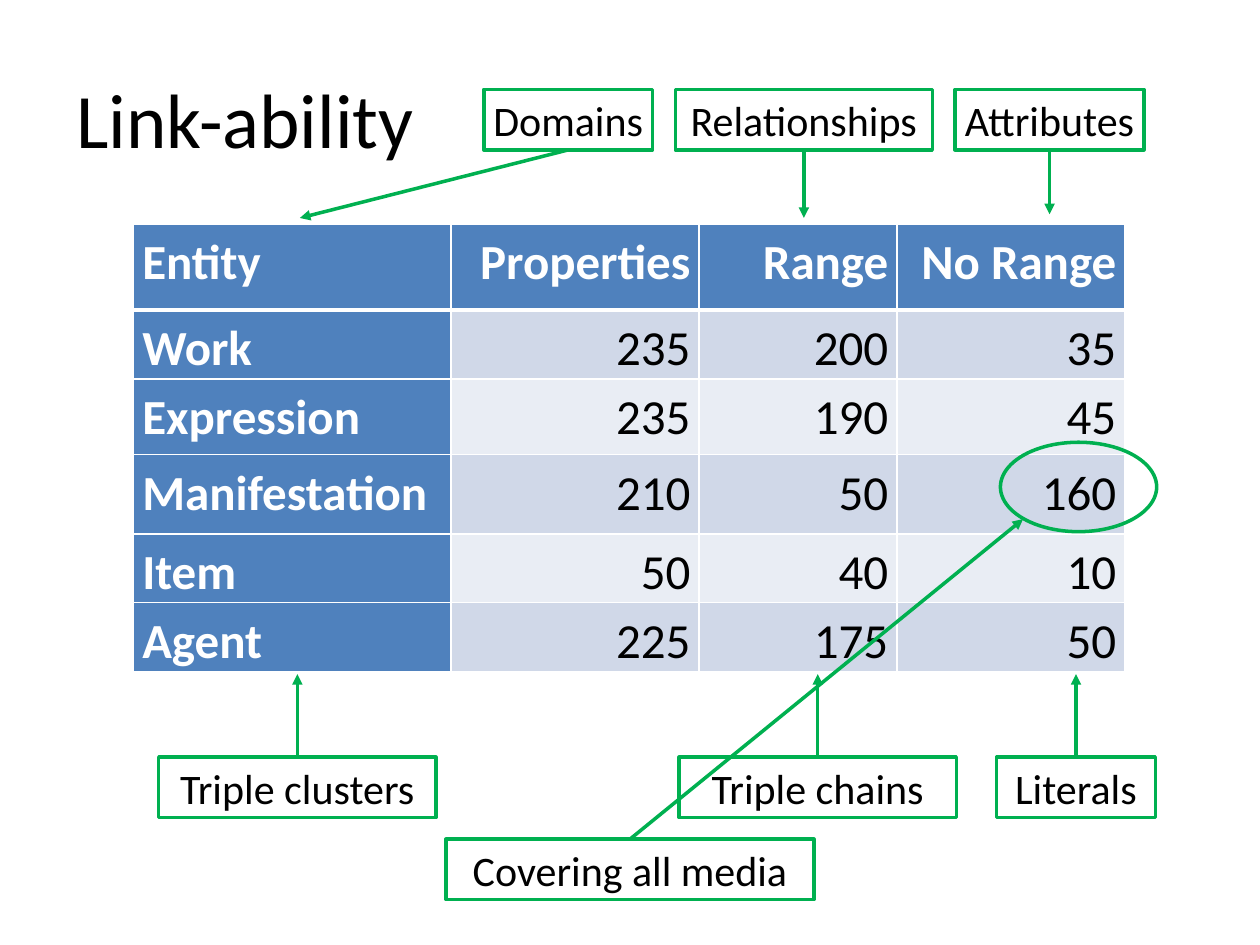
from dataclasses import dataclass

from lxml import etree
from pptx import Presentation
from pptx.dml.color import RGBColor
from pptx.enum import shapes, text
from pptx.oxml import ns
from pptx.util import Inches, Pt


@dataclass(frozen=True)
class Theme:
    font: str = "Calibri"
    ink: str = "000000"
    white: str = "FFFFFF"
    header: str = "4F81BD"
    bands: tuple = ("D0D8E8", "E9EDF4")
    accent: str = "00B050"
    title_size: int = 44
    table_size: int = 28
    label_size: int = 24
    line_width: int = 2


@dataclass(frozen=True)
class Callout:
    label: str
    left: float
    top: float
    width: float
    side: int
    target: tuple[float, float]


THEME = Theme()
TOP, BOTTOM = 0, 2
LABEL_HEIGHT = 0.48
UPPER, LOWER, LOWEST = 0.71, 6.01, 6.66

CALLOUTS = [
    Callout("Triple clusters", 1.26, LOWER, 2.2, TOP, (2.36, 5.35)),
    Callout("Triple chains", 5.39, LOWER, 2.2, TOP, (6.49, 5.35)),
    Callout("Literals", 7.91, LOWER, 1.26, TOP, (8.54, 5.35)),
    Callout("Relationships", 5.36, UPPER, 2.04, BOTTOM, (6.38, 1.73)),
    Callout("Attributes", 7.58, UPPER, 1.5, BOTTOM, (8.33, 1.7)),
    Callout("Domains", 3.84, UPPER, 1.34, BOTTOM, (2.38, 1.73)),
    Callout("Covering all media", 3.54, LOWEST, 2.92, TOP, (8.12, 4.12)),
]

COLUMN_WIDTHS = [2.52, 1.97, 1.57, 1.81]
ROW_HEIGHTS = [0.68, 0.52, 0.6, 0.63, 0.52, 0.52]
ROWS = [
    ("Entity", "Properties", "Range", "No Range"),
    ("Work", 235, 200, 35),
    ("Expression", 235, 190, 45),
    ("Manifestation", 210, 50, 160),
    ("Item", 50, 40, 10),
    ("Agent", 225, 175, 50),
]


def style_font(paragraph, size: int, color: str, bold: bool = False) -> None:
    font = paragraph.font
    font.name = THEME.font
    font.size = Pt(size)
    font.bold = bold
    font.color.rgb = RGBColor.from_string(color)


def set_borders(cell, bottom_width: int) -> None:
    properties = cell._tc.get_or_add_tcPr()
    for position, side in enumerate("LRTB"):
        width = bottom_width if side == "B" else 1
        border = etree.Element(ns.qn(f"a:ln{side}"), w=str(Pt(width)))
        fill = etree.SubElement(border, ns.qn("a:solidFill"))
        etree.SubElement(fill, ns.qn("a:srgbClr"), val=THEME.white)
        properties.insert(position, border)


def add_entity_table(slide) -> None:
    table = slide.shapes.add_table(
        len(ROWS), len(COLUMN_WIDTHS), Inches(1.06), Inches(1.78),
        Inches(sum(COLUMN_WIDTHS)), Inches(sum(ROW_HEIGHTS)),
    ).table
    table.first_col = True
    for column, width in zip(table.columns, COLUMN_WIDTHS):
        column.width = Inches(width)
    for row_index, (row, height) in enumerate(zip(table.rows, ROW_HEIGHTS)):
        row.height = Inches(height)
        for column_index, cell in enumerate(row.cells):
            is_heading = row_index == 0 or column_index == 0
            cell.margin_left = cell.margin_right = Inches(0.07)
            cell.margin_top = cell.margin_bottom = 0
            cell.text = str(ROWS[row_index][column_index])
            paragraph = cell.text_frame.paragraphs[0]
            paragraph.line_spacing = 1.15
            if column_index:
                paragraph.alignment = text.PP_ALIGN.RIGHT
            style_font(paragraph, THEME.table_size,
                       THEME.white if is_heading else THEME.ink, is_heading)
            cell.fill.solid()
            cell.fill.fore_color.rgb = RGBColor.from_string(
                THEME.header if is_heading else THEME.bands[(row_index - 1) % 2])
            set_borders(cell, 1 if row_index else 3)


def add_title(slide) -> None:
    title = slide.shapes.add_textbox(
        Inches(0.51), Inches(0.52), Inches(2.93), Inches(0.84))
    frame = title.text_frame
    frame.word_wrap = False
    frame.auto_size = text.MSO_AUTO_SIZE.SHAPE_TO_FIT_TEXT
    frame.text = "Link-ability"
    style_font(frame.paragraphs[0], THEME.title_size, THEME.ink)


def style_line(shape) -> None:
    shape.line.color.rgb = RGBColor.from_string(THEME.accent)
    shape.line.width = Pt(THEME.line_width)


def add_outline(slide, kind, left: float, top: float, width: float, height: float):
    shape = slide.shapes.add_shape(
        kind, Inches(left), Inches(top), Inches(width), Inches(height))
    shape.shadow.inherit = False
    shape.fill.background()
    style_line(shape)
    return shape


def add_callout(slide, callout: Callout) -> None:
    box = add_outline(slide, shapes.MSO_SHAPE.RECTANGLE, callout.left, callout.top,
                      callout.width, LABEL_HEIGHT)
    frame = box.text_frame
    frame.margin_left = frame.margin_right = Inches(0.04)
    frame.margin_top = frame.margin_bottom = Inches(0.04)
    frame.word_wrap = True
    frame.auto_size = text.MSO_AUTO_SIZE.SHAPE_TO_FIT_TEXT
    frame.text = callout.label
    paragraph = frame.paragraphs[0]
    paragraph.alignment = text.PP_ALIGN.CENTER
    style_font(paragraph, THEME.label_size, THEME.ink)

    end_x, end_y = callout.target
    start_y = callout.top + (LABEL_HEIGHT if callout.side == BOTTOM else 0)
    arrow = slide.shapes.add_connector(
        shapes.MSO_CONNECTOR.STRAIGHT,
        Inches(callout.left + callout.width / 2), Inches(start_y),
        Inches(end_x), Inches(end_y))
    arrow.begin_connect(box, callout.side)
    style_line(arrow)
    etree.SubElement(arrow.line._get_or_add_ln(), ns.qn("a:tailEnd"), type="triangle")
    etree.SubElement(arrow._element.spPr, ns.qn("a:effectLst"))


def main() -> None:
    presentation = Presentation()
    presentation.slide_width = Inches(10)
    presentation.slide_height = Inches(7.5)
    slide = presentation.slides.add_slide(presentation.slide_layouts[6])
    add_entity_table(slide)
    add_title(slide)
    add_outline(slide, shapes.MSO_SHAPE.OVAL, 7.94, 3.51, 1.24, 0.71)
    for callout in CALLOUTS:
        add_callout(slide, callout)
    presentation.save("out.pptx")


if __name__ == "__main__":
    main()
